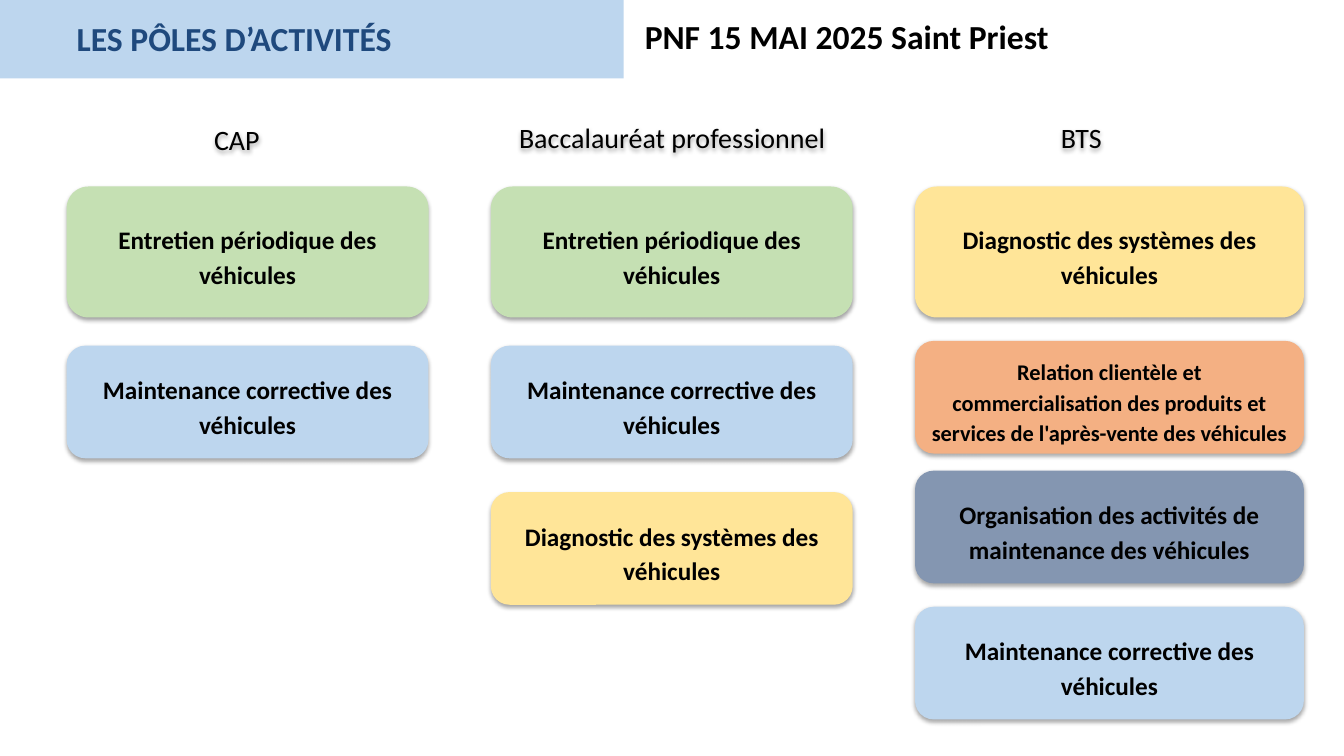
from dataclasses import dataclass

from lxml import etree
from pptx import Presentation
from pptx.dml.color import RGBColor
from pptx.enum.shapes import MSO_SHAPE
from pptx.enum.text import MSO_ANCHOR, MSO_AUTO_SIZE, PP_ALIGN
from pptx.oxml.ns import qn
from pptx.util import Cm, Pt

RECTANGLE = MSO_SHAPE.RECTANGLE
ROUNDED = MSO_SHAPE.FLOWCHART_ALTERNATE_PROCESS
TOP, MIDDLE = MSO_ANCHOR.TOP, MSO_ANCHOR.MIDDLE
LEFT, CENTER = PP_ALIGN.LEFT, PP_ALIGN.CENTER
NO_AUTOFIT = MSO_AUTO_SIZE.NONE


@dataclass(frozen=True)
class Theme:
    font: str = "Calibri"
    black: str = "000000"
    white: str = "FFFFFF"
    navy: str = "1F497D"
    blue: str = "BDD6EE"
    green: str = "C5E0B3"
    yellow: str = "FFE598"
    orange: str = "F4B083"
    slate: str = "8496B1"
    title_size: int = 24
    heading_size: int = 20
    pole_size: int = 18
    small_size: int = 16


THEME = Theme()


@dataclass(frozen=True)
class Area:
    left: float
    top: float
    width: float
    height: float

    def lengths(self) -> tuple:
        return Cm(self.left), Cm(self.top), Cm(self.width), Cm(self.height)


@dataclass(frozen=True)
class Pole:
    text: str
    color: str
    size: int = THEME.pole_size


@dataclass(frozen=True)
class Column:
    heading: str
    heading_left: float
    heading_top: float
    width: float
    tops: tuple
    poles: tuple


# Activity poles, shared between the diplomas
SERVICING = Pole("Entretien périodique des véhicules", THEME.green)
REPAIR = Pole("Maintenance corrective des véhicules", THEME.blue)
DIAGNOSIS = Pole("Diagnostic des systèmes des véhicules", THEME.yellow)
CUSTOMERS = Pole("Relation clientèle et commercialisation des produits et "
                 "services de l'après-vente des véhicules",
                 THEME.orange, THEME.small_size)
ORGANISATION = Pole("Organisation des activités de maintenance des véhicules",
                    THEME.slate)

COLUMNS = (
    Column("CAP", 1.78, 2.95, 9.12, (4.7, 8.71), (SERVICING, REPAIR)),
    Column("Baccalauréat professionnel", 12.75, 2.9, 9.12,
           (4.7, 8.71, 12.4), (SERVICING, REPAIR, DIAGNOSIS)),
    Column("BTS", 23.06, 2.9, 9.8, (4.7, 8.59, 11.86, 15.29),
           (DIAGNOSIS, CUSTOMERS, ORGANISATION, REPAIR)),
)
FIRST_LEFT, COLUMN_STEP = 1.68, 10.69
FIRST_HEIGHT, POLE_HEIGHT = 3.3, 2.84


def set_all(target, values: dict) -> None:
    for name, value in values.items():
        setattr(target, name, value)


def write(box, text: str, size: int, color: str = THEME.black,
          bold: bool = True, align=LEFT, anchor=TOP, spacing: float = 1.0) -> None:
    frame = box.text_frame
    set_all(frame, {"word_wrap": True, "auto_size": NO_AUTOFIT,
                    "vertical_anchor": anchor})
    para = frame.paragraphs[0]
    set_all(para, {"alignment": align, "line_spacing": spacing})
    span = para.add_run()
    span.text = text
    set_all(span.font, {"name": THEME.font, "size": Pt(size), "bold": bold})
    span.font.color.rgb = RGBColor.from_string(color)


def add_block(page, preset, area: Area, color: str):
    block = page.shapes.add_shape(preset, *area.lengths())
    block.shadow.inherit = False
    block.fill.solid()
    block.fill.fore_color.rgb = RGBColor.from_string(color)
    block.line.fill.background()
    return block


def add_shadow(box) -> None:
    box.shadow.inherit = False
    effects = box.element.spPr.find(qn("a:effectLst"))
    shadow = etree.SubElement(effects, qn("a:outerShdw"), blurRad="40000",
                              dist="23000", dir="5400000", rotWithShape="0")
    shade = etree.SubElement(shadow, qn("a:srgbClr"), val=THEME.black)
    etree.SubElement(shade, qn("a:alpha"), val="35000")


def add_header(page) -> None:
    add_block(page, RECTANGLE, Area(0, 0, 15.72, 1.98), THEME.blue)
    event = add_block(page, RECTANGLE, Area(16, 0.28, 10.74, 1.27), THEME.white)
    write(event, "PNF 15 MAI 2025 Saint Priest", THEME.title_size)

    # The title stands in front of the blue band
    title = page.shapes.title
    title.element.getparent().append(title.element)
    places = ("left", "top", "width", "height")
    set_all(title, dict(zip(places, Area(1.68, 0.33, 16.94, 1.27).lengths())))
    write(title, "LES PÔLES D’ACTIVITÉS", THEME.title_size, THEME.navy)


def add_column(page, column: Column, left: float) -> None:
    area = Area(column.heading_left, column.heading_top, 8.38, 1.12)
    heading = page.shapes.add_textbox(*area.lengths())
    write(heading, column.heading, THEME.heading_size, bold=False, align=CENTER)
    add_shadow(heading)
    for index, (top, pole) in enumerate(zip(column.tops, column.poles)):
        height = POLE_HEIGHT if index else FIRST_HEIGHT
        block = add_block(page, ROUNDED, Area(left, top, column.width, height),
                          pole.color)
        add_shadow(block)
        write(block, pole.text, pole.size, align=CENTER, anchor=MIDDLE,
              spacing=1.15)
        block.text_frame.margin_top = Cm(0.27)


def main() -> None:
    deck = Presentation()
    set_all(deck, {"slide_width": Cm(33.87), "slide_height": Cm(19.05)})
    page = deck.slides.add_slide(deck.slide_layouts[5])
    add_header(page)
    for index, column in enumerate(COLUMNS):
        add_column(page, column, FIRST_LEFT + index * COLUMN_STEP)
    deck.save("out.pptx")


if __name__ == "__main__":
    main()
